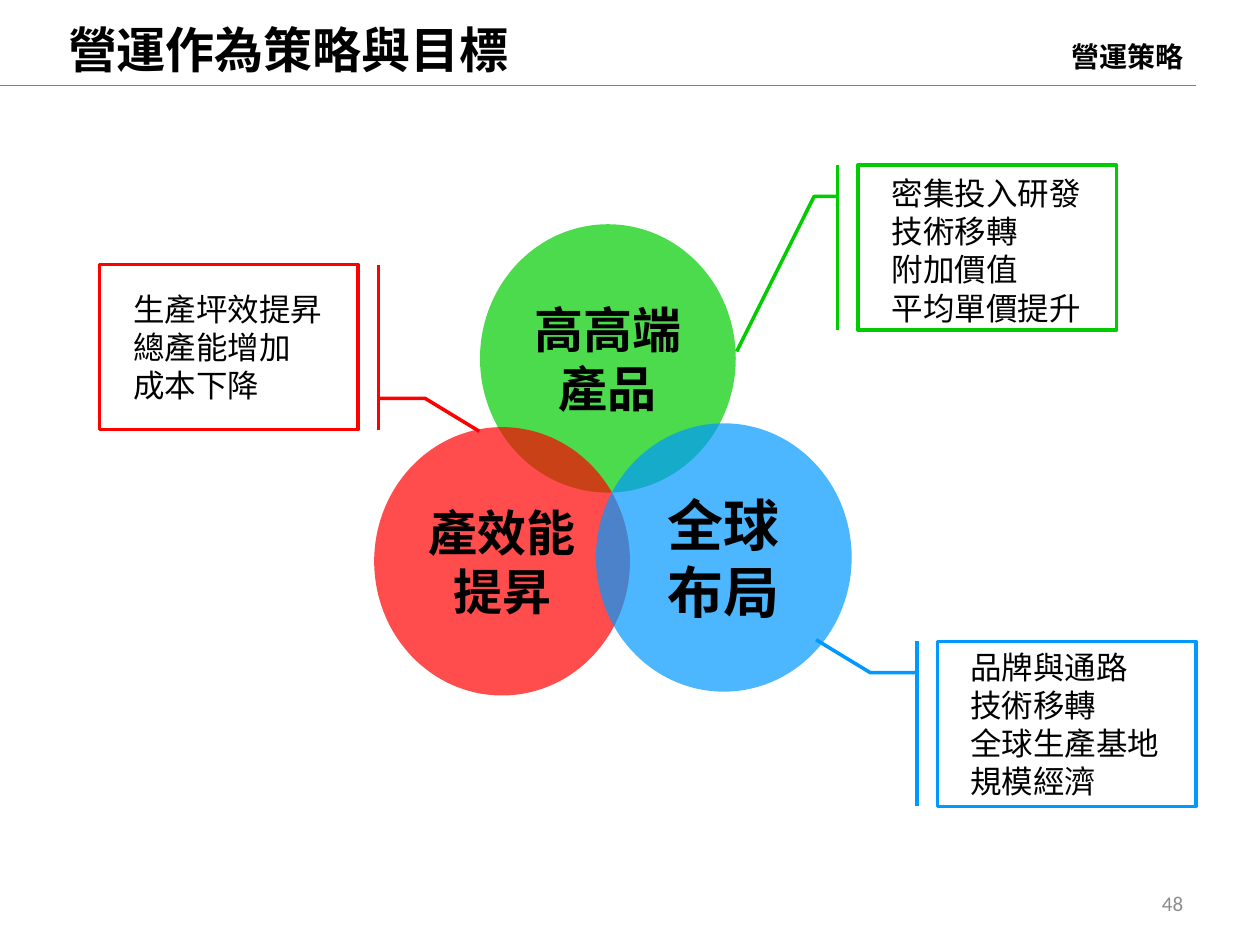
from lxml import etree
from pptx import Presentation, util as u
from pptx.dml.color import RGBColor
from pptx.enum import shapes, text
from pptx.oxml.ns import qn

HUES = {"green": "00CC00", "red": "FF0000", "blue": "0099FF",
        "black": "000000", "gray": "808080", "pale": "8C8C8C"}
CJK = "Noto Sans CJK SC"
LEFT, MID, RIGHT = text.PP_ALIGN.LEFT, text.PP_ALIGN.CENTER, text.PP_ALIGN.RIGHT


class Deck:
    def __init__(self):
        self.prs = Presentation()
        self.prs.slide_width = u.Inches(10)
        self.prs.slide_height = u.Inches(7.5)
        self.slide = self.prs.slides.add_slide(self.prs.slide_layouts[5])

    def hue(self, name):
        return RGBColor.from_string(HUES[name])

    def box(self, at):
        return [u.Inches(n) for n in at]

    def fill_text(self, frame, lines, size, bold=False, align=LEFT,
                  font="Calibri", hue="black"):
        for i, line in enumerate(lines):
            para = frame.paragraphs[0] if i == 0 else frame.add_paragraph()
            para.alignment = align
            para.line_spacing = u.Pt(round(size * 1.21, 1))
            run = para.add_run()
            run.text = line
            run.font.name = font
            run.font.size = u.Pt(size)
            run.font.bold = bold
            run.font.color.rgb = self.hue(hue)
            east = etree.Element(qn("a:ea"), typeface=CJK)
            run.font._element.find(qn("a:latin")).addnext(east)

    def title(self, line, at):
        shape = self.slide.shapes.title
        shape.left, shape.top, shape.width, shape.height = self.box(at)
        frame = shape.text_frame
        frame.auto_size = text.MSO_AUTO_SIZE.NONE
        frame.word_wrap = False
        frame.vertical_anchor = text.MSO_ANCHOR.TOP
        self.fill_text(frame, [line], 28, True, font=CJK)

    def label(self, lines, at, size, anchor=text.MSO_ANCHOR.TOP, **style):
        frame = self.slide.shapes.add_textbox(*self.box(at)).text_frame
        frame.word_wrap = False
        frame.vertical_anchor = anchor
        self.fill_text(frame, lines, size, **style)

    def rule(self, x1, y1, x2, y2):
        line = self.slide.shapes.add_connector(
            shapes.MSO_CONNECTOR.STRAIGHT, *self.box((x1, y1, x2, y2)))
        line.line.color.rgb = self.hue("gray")
        line.line.width = u.Pt(0.5)
        etree.SubElement(line._element.spPr, qn("a:effectLst"))

    def circle(self, lines, x, y, hue, size):
        shape = self.slide.shapes.add_shape(
            shapes.MSO_SHAPE.OVAL, *self.box((x, y, 2.03, 2.13)))
        shape.shadow.inherit = False
        shape.fill.solid()
        shape.fill.fore_color.rgb = self.hue(hue)
        tint = shape._element.spPr.find(".//" + qn("a:srgbClr"))
        etree.SubElement(tint, qn("a:alpha"), val="70000")
        shape.line.fill.background()
        frame = shape.text_frame
        frame.word_wrap = True
        frame.vertical_anchor = text.MSO_ANCHOR.MIDDLE
        self.fill_text(frame, lines, size, True, MID)

    def callout(self, x, y, hue, bend, tip, turn=0):
        shape = self.slide.shapes.add_shape(
            shapes.MSO_SHAPE.LINE_CALLOUT_2_BORDER_AND_ACCENT_BAR,
            *self.box((x, y, 2.05, 1.31)))
        shape.shadow.inherit = False
        shape.fill.background()
        shape.line.color.rgb = self.hue(hue)
        shape.line.width = u.Pt(2)
        shape.rotation = turn
        for i, part in enumerate((0.19, -0.08, 0.19, bend, tip, -0.47)):
            shape.adjustments[i] = part


def main():
    deck = Deck()
    deck.label(["48"], (7.16, 6.97, 2.33, 0.4), 12,
               text.MSO_ANCHOR.MIDDLE, align=RIGHT, hue="pale")
    deck.rule(0, 0.68, 9.49, 0.68)
    deck.title("營運作為策略與目標", (0.44, 0.1, 3.74, 0.57))

    deck.circle(["高高端", "產品"], 3.81, 1.78, "green", 28)
    deck.circle(["產效能", "提昇"], 2.97, 3.39, "red", 28)
    deck.circle(["全球布局"], 4.73, 3.36, "blue", 32)

    notes = [
        (["密集投入研發", "技術移轉", "附加價值", "平均單價提升"],
         (6.98, 1.33, 1.72, 1.31)),
        (["品牌與通路", "技術移轉", "全球生產基地", "規模經濟"],
         (7.6, 5.09, 1.72, 1.31)),
        (["生產坪效提昇", "總產能增加", "成本下降"],
         (0.96, 2.25, 1.72, 1.01)),
    ]
    for lines, at in notes:
        deck.label(lines, at, 18, font=CJK)

    deck.callout(6.81, 1.31, "green", -0.17, 1.13)
    deck.callout(7.44, 5.09, "blue", -0.26, -0.01)
    deck.callout(0.79, 2.1, "red", -0.26, -0.01, 180)
    deck.label(["營運策略"], (8.39, 0.26, 1.1, 0.37), 16, bold=True, align=RIGHT)
    deck.prs.save("out.pptx")


if __name__ == "__main__":
    main()
